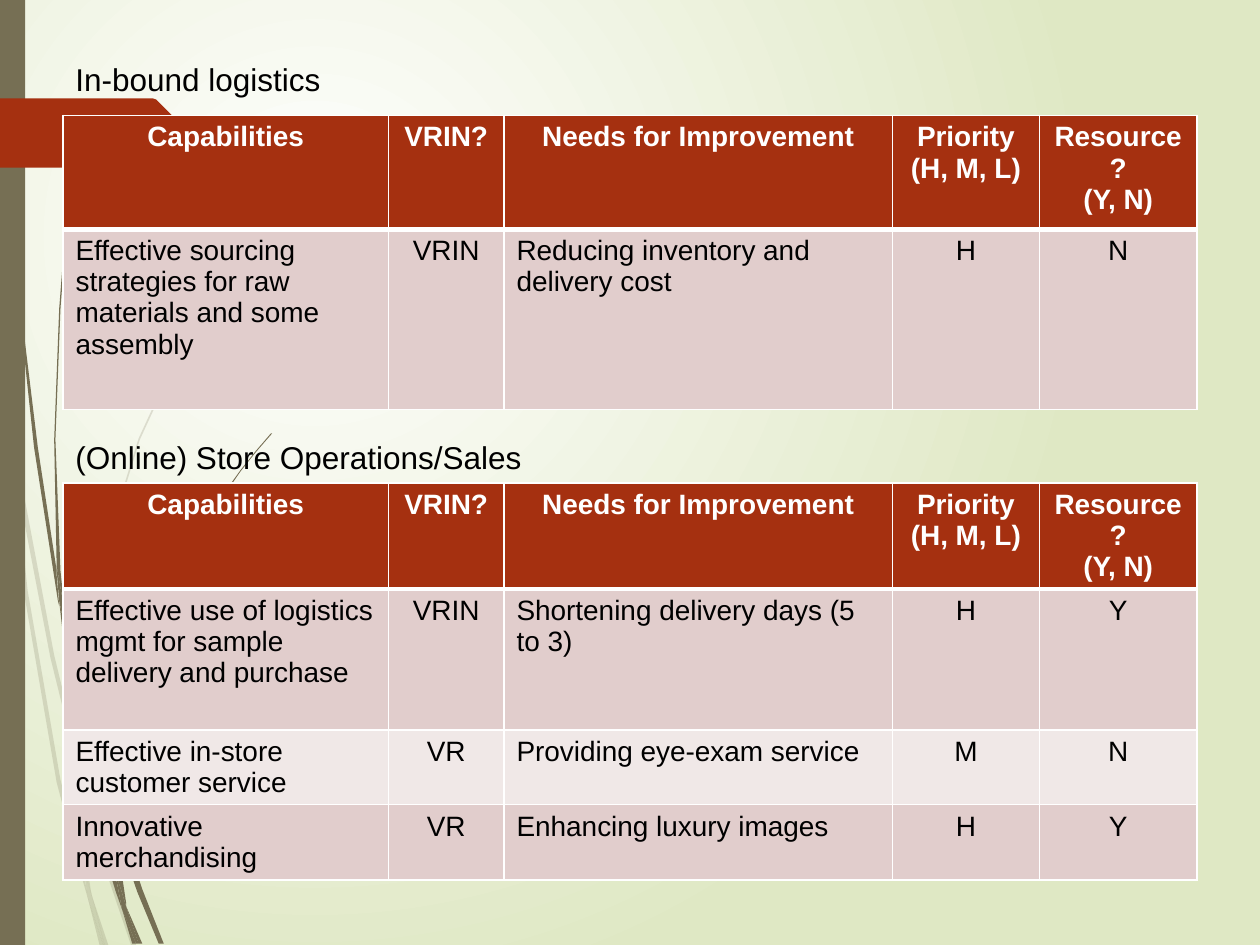
from dataclasses import dataclass

from lxml import etree
from pptx import Presentation
from pptx.dml.color import RGBColor
from pptx.enum.shapes import MSO_SHAPE
from pptx.enum.text import MSO_AUTO_SIZE, PP_ALIGN
from pptx.oxml.ns import qn
from pptx.util import Pt

RECT = MSO_SHAPE.RECTANGLE
LEFT, CENTER = PP_ALIGN.LEFT, PP_ALIGN.CENTER
FIT_SHAPE = MSO_AUTO_SIZE.SHAPE_TO_FIT_TEXT


@dataclass(frozen=True)
class Theme:
    font: str = "Arial"
    caption_size: float = 18
    cell_size: float = 16
    text: str = "000000"
    white: str = "FFFFFF"
    backdrop: str = "DFE8C4"
    olive: str = "766F54"
    rust: str = "A53010"
    bands: tuple = ("E1CDCC", "F0E8E7")
    thin: float = 1
    thick: float = 3
    grid: float = 0.72  # points per unit of the outlines below


FAINT_WISPS = [
    [(8, 350), (6, 322), (0, 282), (0, 299), (7, 344)],
    [(40, 522), (59, 599), (59, 586), (43, 520), (10, 345), (12, 376)],
    [(64, 607), (61, 596), (61, 610), (85, 694), (104, 750), (108, 750), (88, 692)],
    [(83, 750), (86, 750), (73, 711)],
    [(64, 683), (48, 619), (22, 469), (12, 376), (8, 350), (19, 470), (45, 621),
     (64, 693), (70, 714), (69, 707)],
    [(58, 599), (60, 646), (64, 683), (67, 692), (73, 711), (72, 706), (63, 646),
     (61, 610), (61, 608)],
    [(61, 584), (76, 462), (111, 349), (159, 245), (187, 198), (201, 175), (217, 154),
     (217, 153), (201, 175), (186, 197), (158, 244), (110, 348), (75, 461), (59, 584),
     (59, 586), (61, 596)],
    [(70, 714), (79, 750), (82, 750)],
    [(61, 608), (61, 610), (61, 596), (59, 586), (58, 599)],
    [(67, 692), (65, 683), (69, 707), (70, 714), (82, 750), (83, 750), (73, 711)],
]
DARK_WISPS = [
    [(5, 110), (14, 233), (27, 355), (46, 477), (47, 481), (45, 457), (45, 453),
     (30, 355), (15, 232), (6, 109), (4, 48), (3, 0), (2, 0), (3, 48)],
    [(73, 592), (88, 645), (88, 633), (88, 631), (77, 590), (50, 472), (53, 505)],
    [(94, 649), (91, 641), (91, 656), (109, 708), (126, 749), (130, 749), (113, 706)],
    [(91, 691), (81, 657), (60, 556), (53, 505), (47, 477), (56, 557), (77, 659),
     (92, 708), (97, 722), (96, 717)],
    [(50, 472), (48, 453), (44, 349), (48, 245), (52, 193), (58, 141), (51, 193),
     (47, 245), (43, 349), (45, 449), (49, 472)],
    [(110, 749), (113, 749), (100, 719)],
    [(47, 477), (53, 505), (50, 472), (49, 472), (45, 449), (45, 453)],
    [(91, 633), (103, 552), (131, 476), (169, 406), (191, 374), (203, 359), (216, 344),
     (215, 344), (203, 358), (191, 373), (168, 405), (129, 474), (101, 551), (88, 631),
     (91, 641)],
    [(97, 722), (105, 749), (108, 749)],
    [(88, 645), (91, 691), (96, 706), (100, 719), (100, 716), (91, 656), (90, 651)],
    [(88, 645), (90, 651), (91, 656), (91, 641), (88, 631), (88, 633)],
    [(96, 706), (91, 691), (96, 717), (97, 722), (108, 749), (110, 749), (100, 719)],
]
ARROW_TAB = [(149, 107), (124, 132), (121, 133), (0, 133), (0, 78), (121, 78),
             (124, 79), (149, 104)]

COLUMNS = [(186, LEFT), (66, CENTER), (222, LEFT), (84, CENTER), (90, CENTER)]
HEADER = ["Capabilities", "VRIN?", "Needs for Improvement",
          "Priority\n(H, M, L)", "Resource?\n(Y, N)"]
INBOUND = [
    ["Effective sourcing strategies for raw materials and some assembly", "VRIN",
     "Reducing inventory and delivery cost", "H", "N"],
]
STORE = [
    ["Effective use of logistics mgmt for sample delivery and purchase", "VRIN",
     "Shortening delivery days (5 to 3)", "H", "Y"],
    ["Effective in-store customer service", "VR", "Providing eye-exam service", "M", "N"],
    ["Innovative merchandising", "VR", "Enhancing luxury images", "H", "Y"],
]


class SlideBuilder:
    def __init__(self, slide, theme):
        self.s, self.theme = slide, theme

    def background(self):
        """Radial gradient centred a quarter of the way in from the top left."""
        fill = self.s.background.fill
        fill.gradient()
        for stop, color in zip(fill.gradient_stops, (self.theme.white, self.theme.backdrop)):
            stop.color.rgb = RGBColor.from_string(color)
        grad = self.s.element.find(".//" + qn("a:gradFill"))
        grad.remove(grad.find(qn("a:lin")))
        circle = etree.SubElement(grad, qn("a:path"))
        circle.set("path", "circle")
        etree.SubElement(circle, qn("a:fillToRect"),
                         l="50000", t="50000", r="100000", b="100000")

    def paint(self, sp, color, opacity=100):
        sp.shadow.inherit = False
        sp.line.fill.background()
        sp.fill.solid()
        sp.fill.fore_color.rgb = RGBColor.from_string(color)
        if opacity < 100:
            clr = sp.element.spPr.find(".//" + qn("a:srgbClr"))
            etree.SubElement(clr, qn("a:alpha"), val=str(opacity * 1000))

    def bar(self, x, y, w, h, color):
        self.paint(self.s.shapes.add_shape(RECT, Pt(x), Pt(y), Pt(w), Pt(h)), color)

    def outline(self, points, color, opacity=100):
        start, *rest = points
        builder = self.s.shapes.build_freeform(*start, scale=Pt(self.theme.grid))
        builder.add_line_segments(rest, close=True)
        self.paint(builder.convert_to_shape(), color, opacity)

    def put_text(self, tf, text, size, color, bold=False, align=LEFT):
        tf.text = text
        for p in tf.paragraphs:
            p.alignment = align
            for r in p.runs:
                for name, value in dict(name=self.theme.font, size=Pt(size), bold=bold).items():
                    setattr(r.font, name, value)
                r.font.color.rgb = RGBColor.from_string(color)

    def caption(self, text, x, y, w, h):
        tf = self.s.shapes.add_textbox(Pt(x), Pt(y), Pt(w), Pt(h)).text_frame
        tf.word_wrap = True
        tf.auto_size = FIT_SHAPE
        self.put_text(tf, text, self.theme.caption_size, self.theme.text)

    def borders(self, cell, row):
        """White edges, thick between the header and the first body row."""
        t = self.theme
        widths = {"L": t.thin, "R": t.thin, "T": t.thick if row == 1 else t.thin,
                  "B": t.thick if row == 0 else t.thin}
        for side, width in widths.items():
            ln = etree.SubElement(cell._tc.get_or_add_tcPr(), qn("a:ln" + side),
                                  w=str(Pt(width)))
            fill = etree.SubElement(ln, qn("a:solidFill"))
            etree.SubElement(fill, qn("a:srgbClr"), val=t.white)

    def table(self, rows, heights, x, y):
        t = self.theme
        width = sum(w for w, _ in COLUMNS)
        table = self.s.shapes.add_table(len(heights), len(COLUMNS), Pt(x), Pt(y),
                                        Pt(width), Pt(sum(heights))).table
        for col, (w, _) in zip(table.columns, COLUMNS):
            col.width = Pt(w)
        for i, (texts, height) in enumerate(zip([HEADER] + rows, heights)):
            table.rows[i].height = Pt(height)
            head = i == 0
            fill = t.rust if head else t.bands[(i - 1) % 2]
            for j, (text, (_, align)) in enumerate(zip(texts, COLUMNS)):
                cell = table.cell(i, j)
                self.borders(cell, i)
                cell.fill.solid()
                cell.fill.fore_color.rgb = RGBColor.from_string(fill)
                self.put_text(cell.text_frame, text, t.cell_size,
                              t.white if head else t.text, head, CENTER if head else align)


def main():
    prs = Presentation()
    prs.slide_width, prs.slide_height = Pt(720), Pt(540)
    theme = Theme()
    b = SlideBuilder(prs.slides.add_slide(prs.slide_layouts[6]), theme)
    b.background()
    for wisps, opacity in ((FAINT_WISPS, 20), (DARK_WISPS, 100)):
        for points in wisps:
            b.outline(points, theme.olive, opacity)
    b.bar(0, 0, 14.4, 540, theme.olive)
    b.outline(ARROW_TAB, theme.rust)
    b.table(STORE, [60.5, 80.5, 42.5, 43], 36, 276)
    b.caption("(Online) Store Operations/Sales", 36, 246.5, 294, 29)
    b.table(INBOUND, [65, 103], 36, 66)
    b.caption("In-bound logistics", 36, 30.5, 204, 29)
    prs.save("out.pptx")


if __name__ == "__main__":
    main()
